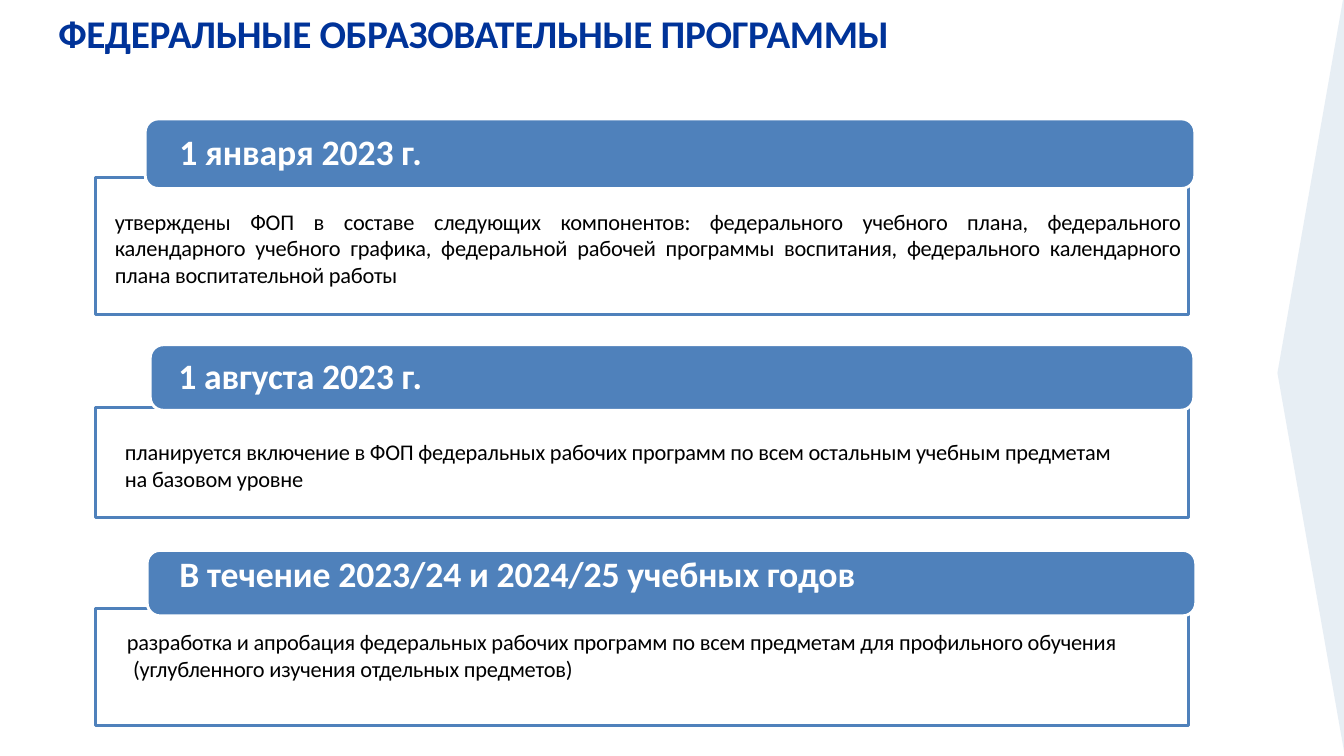
import pptx
import pptx.util
import pptx.dml.color
import pptx.enum.shapes
import pptx.enum.text
import lxml.etree
from pptx.util import Inches, Pt

THEME = {
    "font": "Calibri", "title": "003399", "blue": "4F81BB", "white": "FFFFFF",
    "black": "000000", "pale": "DCE6F0", "title_size": 28, "heading_size": 25.5,
    "body_size": 16, "line": 2.04,
}
TITLE = "ФЕДЕРАЛЬНЫЕ ОБРАЗОВАТЕЛЬНЫЕ ПРОГРАММЫ"
FRAME_LEFT, FRAME_WIDTH, CORNER = 0.95, 10.84, 0.13
STAGES = [
    {
        "frame": (1.76, 1.36), "banner": (1.44, 1.18, 10.41, 0.69),
        "heading": "1 января 2023 г.", "heading_at": (1.77, 1.28, 9.9, 0.45),
        "body": ["утверждены ФОП в составе следующих компонентов: федерального учебного "
                 "плана, федерального календарного учебного графика, федеральной рабочей "
                 "программы воспитания, федерального календарного плана воспитательной работы"],
        "body_at": (1.13, 2.05, 10.59, 0.82), "justify": True,
    },
    {
        "frame": (4.04, 1.09), "banner": (1.49, 3.42, 10.35, 0.65),
        "heading": "1 августа 2023 г.", "heading_at": (1.76, 3.5, 2.6, 0.45),
        "body": ["планируется включение в ФОП федеральных рабочих программ по всем остальным "
                 "учебным предметам на базовом уровне"],
        "body_at": (1.23, 4.34, 10.06, 0.56),
    },
    {
        "frame": (6.04, 1.16), "banner": (1.46, 5.46, 10.4, 0.65),
        "heading": "В течение 2023/24 и 2024/25 учебных годов",
        "heading_at": (1.77, 5.46, 7.2, 0.45),
        "body": ["разработка и апробация федеральных рабочих программ по всем предметам "
                 "для профильного обучения", "(углубленного изучения отдельных предметов)"],
        "body_at": (1.25, 6.22, 10.2, 0.55), "next_indent": 0.06,
    },
]
ARROW = [(13.33, 0), (13.32, 0), (12.67, 3.7), (13.33, 7.45)]


def color(name):
    return pptx.dml.color.RGBColor.from_string(THEME[name])


def add_text(page, lines, place, size, ink, bold=False, justify=False,
             spacing=-0.15, next_indent=0):
    box = page.shapes.add_textbox(*map(Inches, place))
    frame = box.text_frame
    frame.word_wrap = True
    frame.margin_left = frame.margin_right = frame.margin_bottom = 0
    frame.margin_top = Inches(0.01)
    for index, line in enumerate(lines):
        para = frame.paragraphs[0] if index == 0 else frame.add_paragraph()
        para.space_before = Pt(0 if index else 0.9)
        if justify:
            para.alignment = pptx.enum.text.PP_ALIGN.JUSTIFY
        indent = 0.01 + (next_indent if index else 0)
        para._p.get_or_add_pPr().set("marL", str(Inches(indent)))
        span = para.add_run()
        span.text = line
        span.font.name = THEME["font"]
        span.font.size = Pt(THEME[size])
        span.font.bold = bold
        span.font.color.rgb = color(ink)
        span._r.get_or_add_rPr().set("spc", str(round(spacing * 100)))


def paint(shape, fill=None, line=None):
    shape.shadow.inherit = False
    if fill:
        shape.fill.solid()
        shape.fill.fore_color.rgb = color(fill)
    else:
        shape.fill.background()
    if line:
        shape.line.color.rgb = color(line)
        shape.line.width = Pt(THEME["line"])
    else:
        shape.line.fill.background()


def add_stage(page, stage):
    kinds = pptx.enum.shapes.MSO_SHAPE
    top, height = stage["frame"]
    frame = page.shapes.add_shape(
        kinds.RECTANGLE, *map(Inches, (FRAME_LEFT, top, FRAME_WIDTH, height)))
    paint(frame, line="blue")
    banner = page.shapes.add_shape(kinds.ROUNDED_RECTANGLE, *map(Inches, stage["banner"]))
    banner.adjustments[0] = CORNER / stage["banner"][3]
    paint(banner, fill="blue", line="white")
    add_text(page, [stage["heading"]], stage["heading_at"], "heading_size", "white", bold=True)
    add_text(page, stage["body"], stage["body_at"], "body_size", "black",
             justify=stage.get("justify", False), next_indent=stage.get("next_indent", 0))


def add_arrow(page):
    points = [(Inches(x), Inches(y)) for x, y in ARROW]
    builder = page.shapes.build_freeform(*points[0])
    builder.add_line_segments(points[1:], close=True)
    arrow = builder.convert_to_shape()
    paint(arrow, fill="pale")
    tint = arrow.fill._xPr.find(".//" + pptx.oxml.ns.qn("a:srgbClr"))
    lxml.etree.SubElement(tint, pptx.oxml.ns.qn("a:alpha")).set("val", "68000")


def main():
    deck = pptx.Presentation()
    deck.slide_width, deck.slide_height = Inches(13.33), Inches(7.5)
    page = deck.slides.add_slide(deck.slide_layouts[6])
    add_text(page, [TITLE], (0.57, 0.08, 8.8, 0.49), "title_size", "title",
             bold=True, spacing=-0.25)
    for stage in STAGES:
        add_stage(page, stage)
    add_arrow(page)
    deck.save("out.pptx")


if __name__ == "__main__":
    main()
